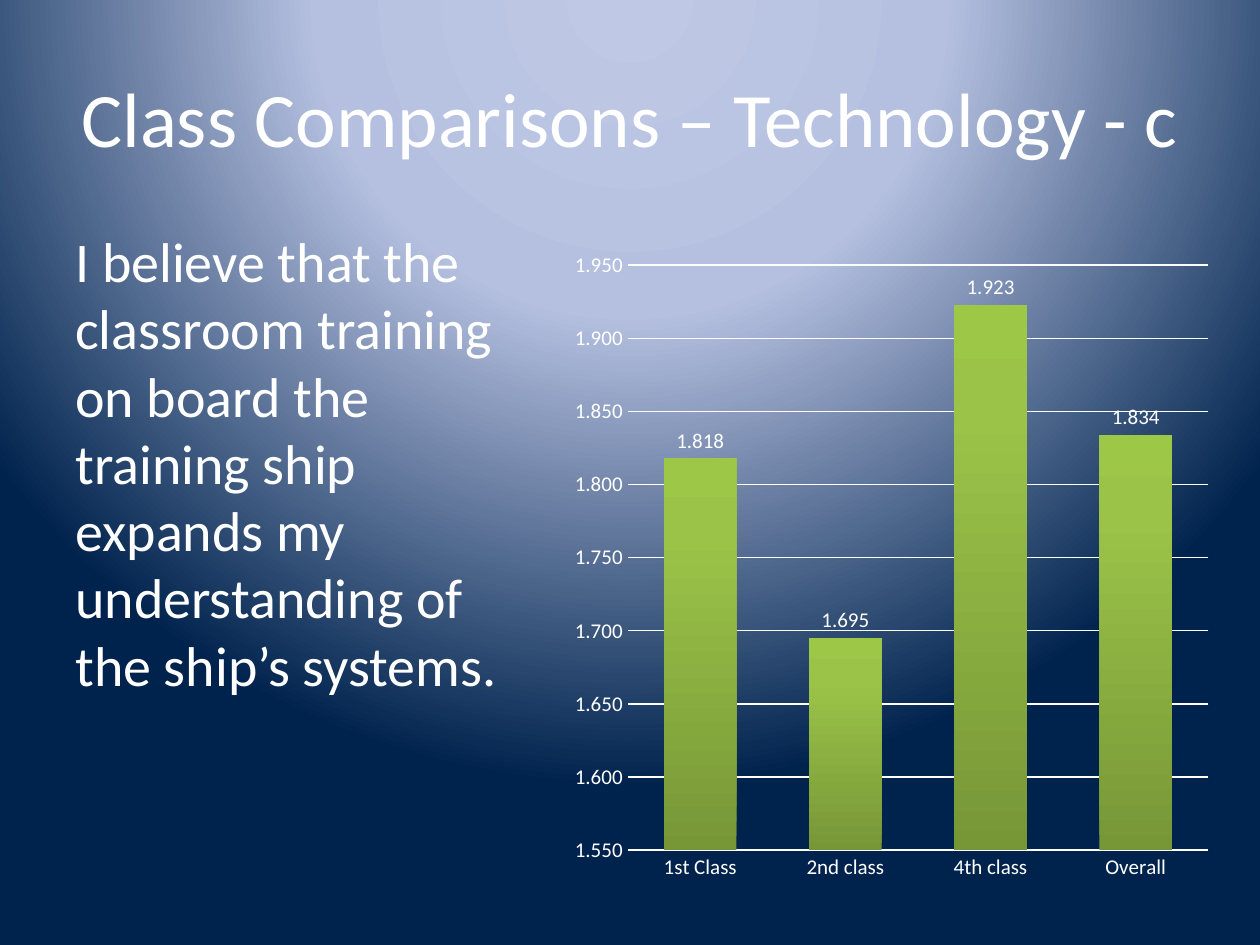
from lxml import etree
from pptx import Presentation
from pptx.chart.data import CategoryChartData
from pptx.dml.color import RGBColor
from pptx.enum.chart import XL_CHART_TYPE, XL_LABEL_POSITION, XL_TICK_MARK
from pptx.enum.text import MSO_ANCHOR, PP_ALIGN
from pptx.oxml import parse_xml
from pptx.oxml.ns import nsdecls, qn
from pptx.util import Inches, Pt

COLUMNS = XL_CHART_TYPE.COLUMN_CLUSTERED
OUTSIDE_END = XL_LABEL_POSITION.OUTSIDE_END
NO_TICK = XL_TICK_MARK.NONE
TOP, MIDDLE = MSO_ANCHOR.TOP, MSO_ANCHOR.MIDDLE
LEFT, CENTER = PP_ALIGN.LEFT, PP_ALIGN.CENTER

FONT = "Calibri"
WHITE = "FFFFFF"
NUMBER_FORMAT = "0.000"
BACKGROUND_STOPS = [(0, "BFC9E5"), (40, "B5C0E0"), (100, "00234D")]
BAR_STOPS = [(0, "779737"), (80, "9BC348"), (100, "9DC746")]
RADIAL = ('<a:path {} path="circle"><a:fillToRect l="50000" t="-80000" '
          'r="50000" b="180000"/></a:path>').format(nsdecls("a"))
UPWARD = '<a:lin {} ang="16200000" scaled="0"/>'.format(nsdecls("a"))
CLASS_AVERAGES = {"1st Class": 1.818, "2nd class": 1.695,
                  "4th class": 1.923, "Overall": 1.834}
PLOT_LAYOUT = {"layoutTarget": "inner", "xMode": "edge", "yMode": "edge",
               "x": 0.101, "y": 0.034, "w": 0.829, "h": 0.857}


def color(hex_string):
    return RGBColor.from_string(hex_string)


def set_attributes(target, values):
    for name, value in values.items():
        setattr(target, name, value)


def style_font(font, size):
    set_attributes(font, {"name": FONT, "size": Pt(size), "bold": False})
    font.fill.solid()
    font.fill.fore_color.rgb = color(WHITE)


def style_line(line, width):
    line.width = Pt(width)
    line.color.rgb = color(WHITE)


def set_gradient(fill, owner, stops, direction):
    """Give fill any number of stops; owner is the element that holds it."""
    fill.gradient()
    gradient = owner.find(".//" + qn("a:gradFill"))
    for child in list(gradient):
        gradient.remove(child)
    stop_list = etree.SubElement(gradient, qn("a:gsLst"))
    for position, hex_string in stops:
        stop = etree.SubElement(stop_list, qn("a:gs"), pos=str(position * 1000))
        etree.SubElement(stop, qn("a:srgbClr"), val=hex_string)
    gradient.append(parse_xml(direction))


def add_text(slide, text, box, size, anchor, alignment):
    shape = slide.shapes.add_textbox(*map(Inches, box))
    frame = shape.text_frame
    set_attributes(frame, {"word_wrap": True, "vertical_anchor": anchor})
    paragraph = frame.paragraphs[0]
    paragraph.alignment = alignment
    run = paragraph.add_run()
    run.text = text
    style_font(run.font, size)


def set_plot_layout(chart):
    plot_area = chart.element.find(".//" + qn("c:plotArea"))
    for old_layout in plot_area.findall(qn("c:layout")):
        plot_area.remove(old_layout)
    layout = etree.Element(qn("c:layout"))
    manual = etree.SubElement(layout, qn("c:manualLayout"))
    for name, value in PLOT_LAYOUT.items():
        etree.SubElement(manual, qn("c:" + name), val=str(value))
    plot_area.insert(0, layout)


def style_axes(chart):
    for axis in (chart.category_axis, chart.value_axis):
        set_attributes(axis, {"major_tick_mark": NO_TICK,
                              "minor_tick_mark": NO_TICK})
        style_font(axis.tick_labels.font, 12)
    style_line(chart.category_axis.format.line, 1)
    axis = chart.value_axis
    set_attributes(axis, {"minimum_scale": 1.55, "maximum_scale": 1.95,
                          "major_unit": 0.05, "has_major_gridlines": True})
    set_attributes(axis.tick_labels, {"number_format": NUMBER_FORMAT,
                                      "number_format_is_linked": False})
    axis.format.line.fill.background()
    style_line(axis.major_gridlines.format.line, 0.75)


def add_column_chart(slide, averages, box):
    data = CategoryChartData(number_format=NUMBER_FORMAT)
    data.categories = list(averages)
    data.add_series("Series 1", list(averages.values()))
    chart = slide.shapes.add_chart(COLUMNS, *map(Inches, box), data).chart
    set_attributes(chart, {"has_legend": False, "has_title": False})
    style_font(chart.font, 10)
    style_axes(chart)
    plot = chart.plots[0]
    set_attributes(plot, {"gap_width": 100, "overlap": -24,
                          "vary_by_categories": False})
    series = plot.series[0]
    set_gradient(series.format.fill, chart.element, BAR_STOPS, UPWARD)
    labels = series.data_labels
    set_attributes(labels, {"show_value": True, "position": OUTSIDE_END,
                            "number_format": NUMBER_FORMAT,
                            "number_format_is_linked": False})
    style_font(labels.font, 12)
    set_plot_layout(chart)


def main():
    presentation = Presentation()
    set_attributes(presentation, {"slide_width": Inches(10),
                                  "slide_height": Inches(7.5)})
    slide = presentation.slides.add_slide(presentation.slide_layouts[6])
    set_gradient(slide.background.fill, slide.element, BACKGROUND_STOPS, RADIAL)
    add_text(slide, "Class Comparisons – Technology - c",
             (0.5, 0.3, 9, 1.25), 44, MIDDLE, CENTER)
    add_text(slide, "I believe that the classroom training on board the "
             "training ship expands my understanding of the ship’s systems.",
             (0.5, 1.75, 3.83, 4.95), 32, TOP, LEFT)
    add_column_chart(slide, CLASS_AVERAGES, (4.42, 1.92, 5.56, 5.42))
    presentation.save("out.pptx")


if __name__ == "__main__":
    main()
